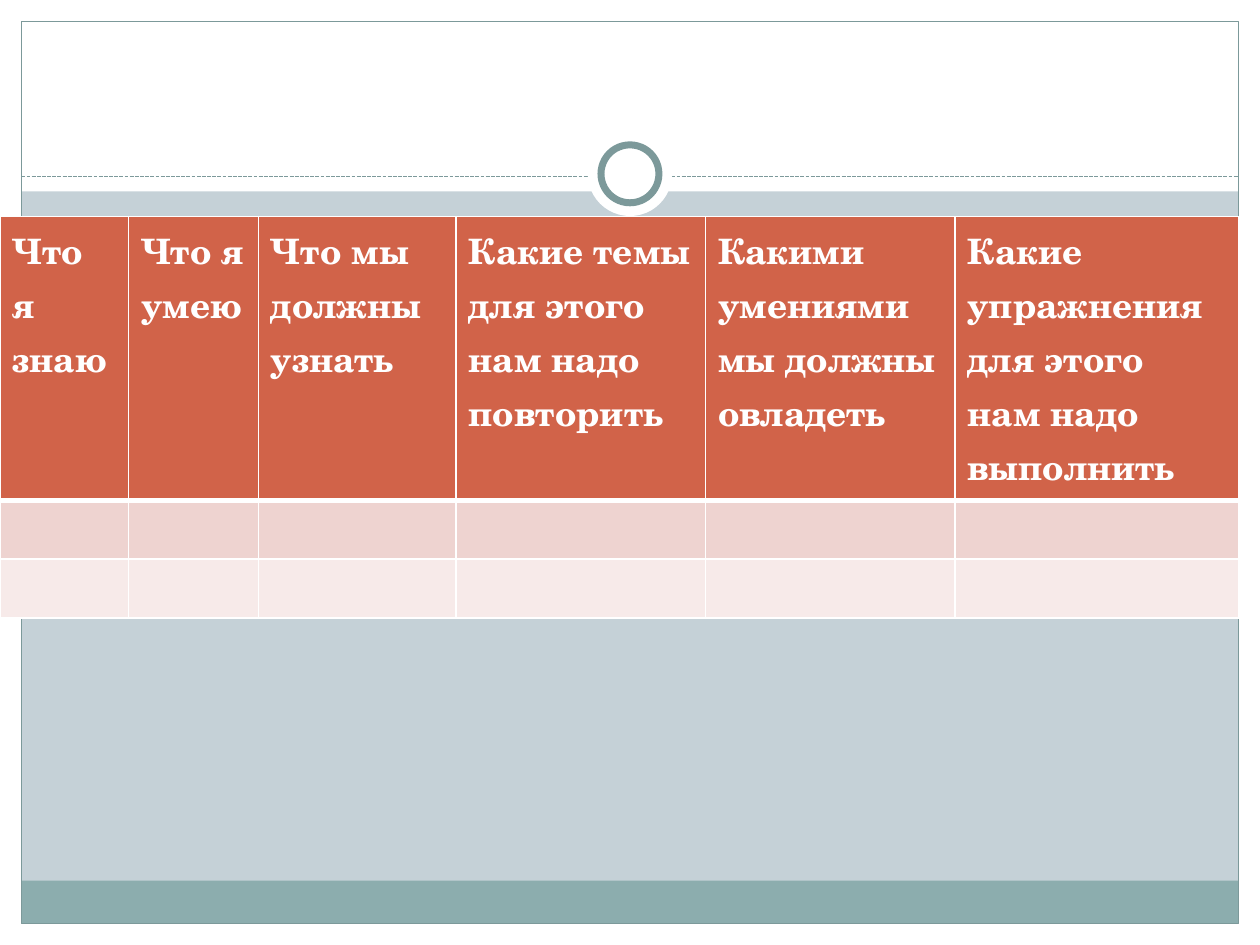
"""Builds a slide with a lesson-planning table on a framed background."""
from lxml.etree import SubElement
from pptx import Presentation
from pptx.dml.color import RGBColor
from pptx.enum.dml import MSO_LINE
from pptx.enum.shapes import MSO_CONNECTOR, MSO_SHAPE
from pptx.oxml.ns import qn
from pptx.util import Inches, Pt

WHITE = RGBColor(0xFF, 0xFF, 0xFF)
BACKGROUND = RGBColor(0xC5, 0xD1, 0xD7)
FOOTER = RGBColor(0x8C, 0xAD, 0xAE)
FRAME = RGBColor(0x7C, 0x99, 0x9A)
HEADER = RGBColor(0xD1, 0x63, 0x49)
ROW_FILLS = (HEADER, RGBColor(0xEE, 0xD3, 0xD0), RGBColor(0xF7, 0xEA, 0xE9))
FONT = "TeX Gyre Schola"

HEADINGS = (
    ("Что я знаю", 1.02),
    ("Что я умею", 1.03),
    ("Что мы должны узнать", 1.57),
    ("Какие темы для этого нам надо повторить", 1.98),
    ("Какими умениями мы должны овладеть", 1.98),
    ("Какие упражнения для этого нам надо выполнить", 2.25),
)
ROW_HEIGHTS = (1.7, 0.39, 0.39)
WIDTH, HEIGHT, MARGIN = 10, 7.5, 0.17
INNER_WIDTH = WIDTH - 2 * MARGIN
BANDS = (
    (0, HEIGHT - MARGIN, WIDTH, MARGIN, WHITE),
    (0, 0, WIDTH, 1.52, WHITE),
    (0, 0, MARGIN, HEIGHT, WHITE),
    (WIDTH - MARGIN, 0, MARGIN, HEIGHT, WHITE),
    (MARGIN, 6.99, INNER_WIDTH, 0.34, FOOTER),
)


def add_figure(slide, preset, box, fill=None, line_width=None):
    figure = slide.shapes.add_shape(preset, *map(Inches, box))
    figure.shadow.inherit = False
    if fill is None:
        figure.fill.background()
    else:
        figure.fill.solid()
        figure.fill.fore_color.rgb = fill
    if line_width is None:
        figure.line.fill.background()
    else:
        figure.line.color.rgb = FRAME
        figure.line.width = Pt(line_width)


def add_circle(slide, diameter, line_width=None):
    box = ((WIDTH - diameter) / 2, 1.38 - diameter / 2, diameter, diameter)
    add_figure(slide, MSO_SHAPE.OVAL, box, WHITE, line_width)


def add_divider(slide):
    divider = slide.shapes.add_connector(
        MSO_CONNECTOR.STRAIGHT, Inches(MARGIN), Inches(1.4), Inches(WIDTH - MARGIN), Inches(1.4))
    divider.line.color.rgb = FRAME
    divider.line.width = Pt(0.75)
    divider.line.dash_style = MSO_LINE.SQUARE_DOT
    SubElement(divider._element.spPr, qn("a:effectLst"))


def set_borders(cell, widths):
    properties = cell._tc.get_or_add_tcPr()
    for index, (side, width) in enumerate(widths.items()):
        border = SubElement(properties, qn(f"a:{side}"), w=str(Pt(width)))
        fill = SubElement(border, qn("a:solidFill"))
        SubElement(fill, qn("a:srgbClr"), val=str(WHITE))
        properties.insert(index, border)


def add_plan(slide):
    width = sum(column_width for _, column_width in HEADINGS)
    plan = slide.shapes.add_table(
        len(ROW_HEIGHTS), len(HEADINGS), 0, Inches(1.72),
        Inches(width), Inches(sum(ROW_HEIGHTS))).table
    for row, height in zip(plan.rows, ROW_HEIGHTS):
        row.height = Inches(height)
    for c, (heading, column_width) in enumerate(HEADINGS):
        plan.columns[c].width = Inches(column_width)
        plan.cell(0, c).text = heading
        for r, fill in enumerate(ROW_FILLS):
            cell = plan.cell(r, c)
            cell.fill.solid()
            cell.fill.fore_color.rgb = fill
            set_borders(cell, {"lnL": 1, "lnR": 1, "lnT": 3 if r == 1 else 1, "lnB": 3 if r == 0 else 1})
            paragraph = cell.text_frame.paragraphs[0]
            paragraph.font.name = FONT
            paragraph.font.size = Pt(20 if r == 0 else 18)
            paragraph.font.bold = r == 0
            paragraph.font.color.rgb = WHITE
    plan.cell(0, 0).margin_right = Inches(0.15)


def main():
    presentation = Presentation()
    presentation.slide_width = Inches(WIDTH)
    presentation.slide_height = Inches(HEIGHT)
    slide = presentation.slides.add_slide(presentation.slide_layouts[6])
    slide.background.fill.solid()
    slide.background.fill.fore_color.rgb = BACKGROUND
    for *box, fill in BANDS:
        add_figure(slide, MSO_SHAPE.RECTANGLE, box, fill)
    frame = (MARGIN, MARGIN, INNER_WIDTH, HEIGHT - 2 * MARGIN)
    add_figure(slide, MSO_SHAPE.RECTANGLE, frame, line_width=0.75)
    add_divider(slide)
    add_circle(slide, 0.67)
    add_circle(slide, 0.46, 4)
    add_plan(slide)
    presentation.save("out.pptx")


if __name__ == "__main__":
    main()
